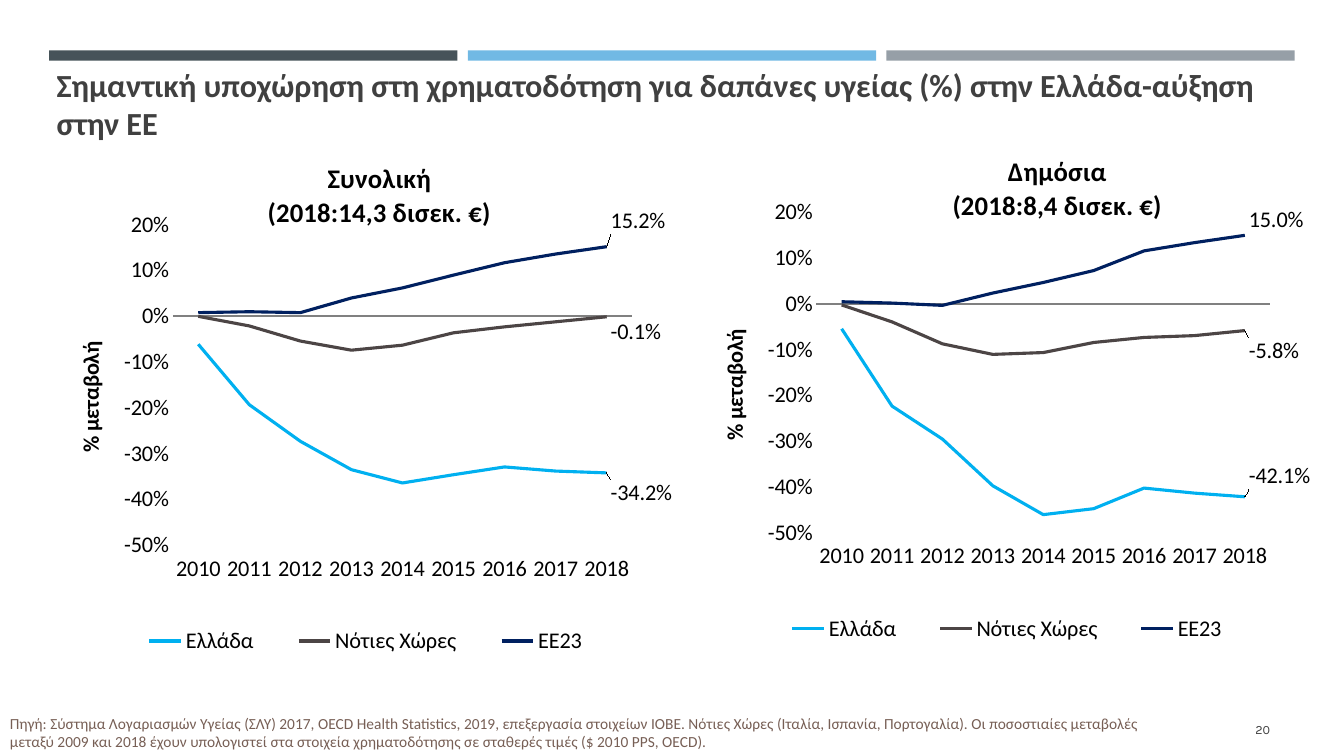
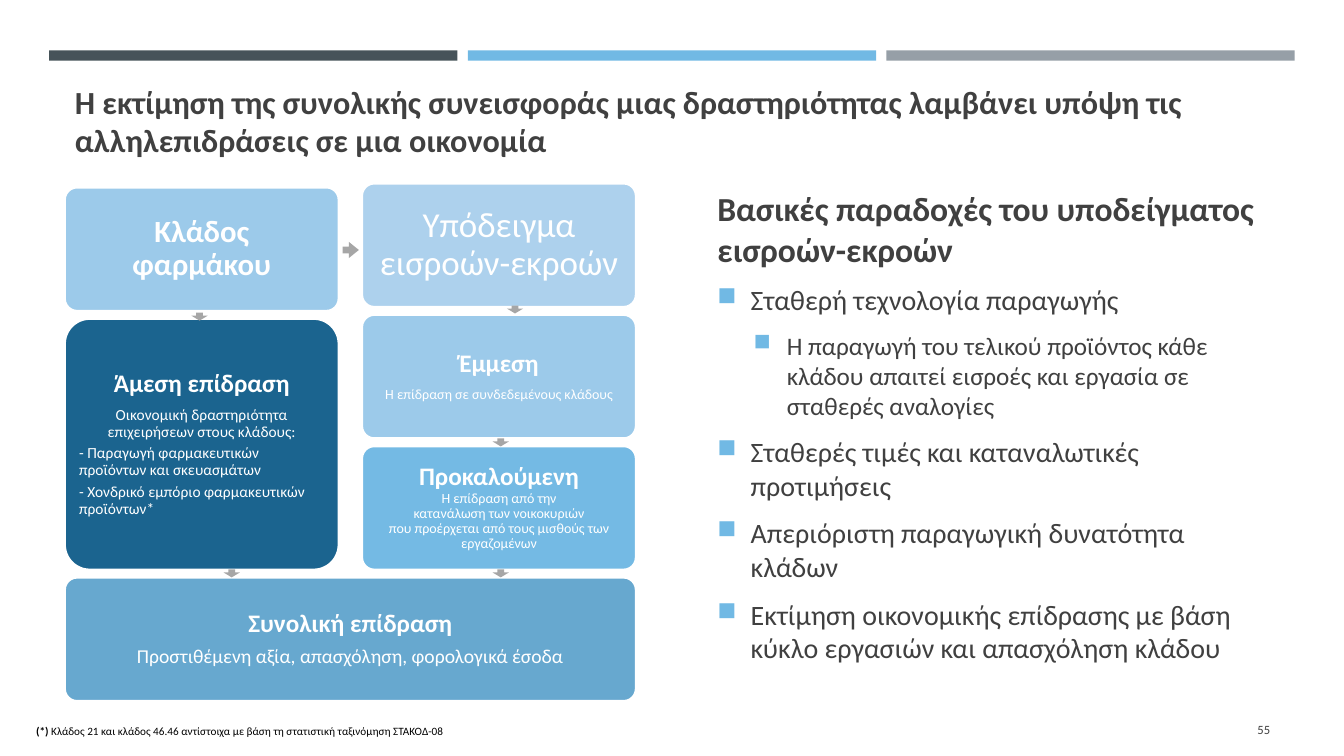
from lxml import etree
from pptx import Presentation
from pptx.chart.data import CategoryChartData
from pptx.dml.color import RGBColor
from pptx.enum.chart import XL_CHART_TYPE as ChartType, XL_LABEL_POSITION as LabelPosition
from pptx.enum.chart import XL_LEGEND_POSITION as LegendPosition, XL_TICK_LABEL_POSITION as TickLabels
from pptx.enum.chart import XL_TICK_MARK as TickMark
from pptx.enum.shapes import MSO_SHAPE as Shape
from pptx.enum.text import MSO_ANCHOR as Anchor, MSO_AUTO_SIZE as AutoSize, PP_ALIGN as Align
from pptx.oxml import parse_xml
from pptx.oxml.ns import nsdecls, qn
from pptx.util import Cm, Pt

FONT = "Calibri"
WHITE, BLACK, GREY, BROWN = "FFFFFF", "000000", "404040", "775F55"
ACCENT, ARROW = "71B9E4", "A6A6A6"
BANDS = ["465359", ACCENT, "969FA7"]

CHART_SLIDE = {
    "title": "Σημαντική υποχώρηση στη χρηματοδότηση για δαπάνες υγείας (%) στην Ελλάδα-αύξηση στην ΕΕ",
    "title_box": (1.17, 1.6, 31.55, 2.11),
    "number": "20",
    "source": "Πηγή: Σύστημα Λογαριασμών Υγείας (ΣΛΥ) 2017, OECD Health Statistics, 2019, επεξεργασία "
              "στοιχείων ΙΟΒΕ. Νότιες Χώρες (Ιταλία, Ισπανία, Πορτογαλία). Οι ποσοστιαίες μεταβολές "
              "μεταξύ 2009 και 2018 έχουν υπολογιστεί στα στοιχεία χρηματοδότησης σε σταθερές τιμές "
              "($ 2010 PPS, OECD).",
}
YEARS = [str(year) for year in range(2010, 2019)]
SERIES = [("Eλλάδα", "00B0F0"), ("Νότιες Χώρες", "4C4545"), ("EΕ23", "002060")]
CHARTS = [
    {
        "title": ["Συνολική", "(2018:14,3 δισεκ. €)"],
        "box": (1.42, 3.71, 15.52, 13.03),
        "title_at": (0.34, 0.02),
        "label_shifts": [0.04, 0.03, -0.05],
        "values": [
            [-0.061, -0.193, -0.273, -0.335, -0.364, -0.346, -0.329, -0.338, -0.342],
            [0, -0.021, -0.054, -0.074, -0.063, -0.036, -0.023, -0.012, -0.001],
            [0.008, 0.01, 0.008, 0.04, 0.062, 0.09, 0.117, 0.136, 0.152],
        ],
    },
    {
        "title": ["Δημόσια", "(2018:8,4 δισεκ. €)"],
        "box": (17.68, 3.4, 15.34, 13.03),
        "title_at": (0.41, 0.03),
        "label_shifts": [-0.04, 0.04, -0.03],
        "values": [
            [-0.054, -0.223, -0.295, -0.397, -0.46, -0.447, -0.402, -0.413, -0.421],
            [-0.002, -0.039, -0.087, -0.11, -0.106, -0.084, -0.073, -0.069, -0.058],
            [0.005, 0.002, -0.003, 0.024, 0.047, 0.073, 0.116, 0.134, 0.15],
        ],
    },
]

MODEL_SLIDE = {
    "title": "Η εκτίμηση της συνολικής συνεισφοράς μιας δραστηριότητας λαμβάνει υπόψη τις "
             "αλληλεπιδράσεις σε μια οικονομία",
    "title_box": (1.63, 2.03, 30.63, 2.11),
    "number": "55",
    "footnote": ("(*) ", "Κλάδος 21 και κλάδος 46.46 αντίστοιχα με βάση τη στατιστική ταξινόμηση ΣΤΑΚΟΔ-08"),
}
LEFT, RIGHT = 1.63, 9.12
CARD_WIDTH, CARD_HEIGHT = 6.91, 3.12
ROWS = [4.62 + 3.31 * row for row in range(4)]
LEFT_DROP = 0.1
CENTRE, START = Align.CENTER, Align.LEFT
CARDS = [
    ((LEFT, ROWS[3], RIGHT + CARD_WIDTH - LEFT, CARD_HEIGHT), "67A8CF", 0.18, [
        ("Συνολική επίδραση", 18, True, CENTRE, 0.35),
        ("Προστιθέμενη αξία, απασχόληση, φορολογικά έσοδα", 14, False, CENTRE, 0.35)]),
    ((LEFT, ROWS[1] + LEFT_DROP, CARD_WIDTH, 6.33), "1B648F", 0.18, [
        ("Άμεση επίδραση", 18, True, CENTRE, 0.35),
        ("Οικονομική δραστηριότητα επιχειρήσεων στους κλάδους:", 11, False, CENTRE, 0.35),
        ("- Παραγωγή φαρμακευτικών προϊόντων και σκευασμάτων", 11, False, START, 0.35),
        ("- Χονδρικό εμπόριο φαρμακευτικών προϊόντων*", 11, False, START, 0.35)]),
    ((LEFT, ROWS[0] + LEFT_DROP, CARD_WIDTH, CARD_HEIGHT), "9CCAEA", 0.23, [
        ("Κλάδος", 22, True, CENTRE, 0),
        ("φαρμάκου", 22, True, CENTRE, 0)]),
    ((RIGHT, ROWS[2], CARD_WIDTH, CARD_HEIGHT), "74BAE4", 0.18, [
        ("Προκαλούμενη", 18, True, CENTRE, 0),
        ("Η επίδραση από την", 10, False, CENTRE, 0),
        ("κατανάλωση των νοικοκυριών", 10, False, CENTRE, 0),
        ("που προέρχεται από τους μισθούς των εργαζομένων", 10, False, CENTRE, 0)]),
    ((RIGHT, ROWS[1], CARD_WIDTH, CARD_HEIGHT), "9CCAEA", 0.18, [
        ("Έμμεση", 18, True, CENTRE, 0.35),
        ("Η επίδραση σε συνδεδεμένους κλάδους", 10, False, CENTRE, 0.35)]),
    ((RIGHT, ROWS[0], CARD_WIDTH, CARD_HEIGHT), "ADD1ED", 0.25, [
        ("Υπόδειγμα εισροών-εκροών", 25, False, CENTRE, 0)]),
]
DOWN_ARROWS = [(5.03, 7.98), (12.98, 7.8), (12.62, 11.15), (12.62, 14.45), (5.84, 14.45)]
RIGHT_ARROW = (8.84, 6.3)
ASSUMPTIONS_TITLE = "Βασικές παραδοχές του υποδείγματος εισροών-εκροών"
ASSUMPTIONS = [
    (0, "Σταθερή τεχνολογία παραγωγής"),
    (1, "Η παραγωγή του τελικού προϊόντος κάθε κλάδου απαιτεί εισροές και εργασία σε σταθερές αναλογίες"),
    (0, "Σταθερές τιμές και καταναλωτικές προτιμήσεις"),
    (0, "Απεριόριστη παραγωγική δυνατότητα κλάδων"),
    (0, "Εκτίμηση οικονομικής επίδρασης με βάση κύκλο εργασιών και απασχόληση κλάδου"),
]
LEVELS = [(0.84, 20), (1.75, 18)]


def colour(value):
    return RGBColor.from_string(value)


def cm_box(values):
    return [Cm(value) for value in values]


def style(font, size, color=BLACK, bold=False, name=FONT):
    font.size, font.bold, font.name = Pt(size), bold, name
    font.color.rgb = colour(color)


def write(frame, text, size, color=BLACK, bold=False, name=FONT, align=Align.LEFT,
          spacing=1.0, before=0, after=0, indent=None):
    para = frame.paragraphs[0]
    if para.runs:
        para = frame.add_paragraph()
    para.alignment, para.line_spacing = align, spacing
    para.space_before, para.space_after = Pt(before), Pt(after)
    if indent:
        add_bullet(para, indent)
    span = para.add_run()
    span.text = text
    style(span.font, size, color, bold, name)
    return para


def add_bullet(para, indent):
    properties = para._p.get_or_add_pPr()
    properties.set("marL", str(Cm(indent)))
    properties.set("indent", str(-Cm(LEVELS[0][0])))
    tint = etree.SubElement(properties, qn("a:buClr"))
    etree.SubElement(tint, qn("a:srgbClr"), val=ACCENT)
    etree.SubElement(properties, qn("a:buSzPct"), val="92000")
    etree.SubElement(properties, qn("a:buChar"), char="■")


def add_text_box(page, box, anchor=Anchor.TOP):
    frame = page.shapes.add_textbox(*cm_box(box)).text_frame
    frame.word_wrap, frame.vertical_anchor = True, anchor
    return frame


def add_block(page, kind, box, fill, line=None):
    block = page.shapes.add_shape(kind, *cm_box(box))
    block.shadow.inherit = False
    block.fill.solid()
    block.fill.fore_color.rgb = colour(fill)
    if line:
        block.line.color.rgb, block.line.width = colour(line), Pt(1.75)
    else:
        block.line.fill.background()
    return block


def add_arrow(page, kind, centre, width, height):
    box = (centre[0] - width / 2, centre[1] - height / 2, width, height)
    arrow = add_block(page, kind, box, ARROW)
    arrow.adjustments[0], arrow.adjustments[1] = 0.41, 0.62


def add_bands(page, layout):
    for index, fill in enumerate(BANDS):
        band = add_block(page, Shape.RECTANGLE, (1.24 + 10.55 * index, 1.27, 10.29, 0.26), fill)
        band.element.nvSpPr.cNvPr.set("id", str(100 + index))
        layout.shapes.element.append(band.element)


def add_page(deck, layout, content, number_font):
    page = deck.slides.add_slide(layout)
    title = page.shapes.title
    title.left, title.top, title.width, title.height = cm_box(content["title_box"])
    frame = title.text_frame
    frame.auto_size, frame.word_wrap, frame.vertical_anchor = AutoSize.NONE, True, Anchor.BOTTOM
    write(frame, content["title"], 23, GREY, True)
    number = add_text_box(page, (29.34, 17.86, 2.92, 1.02), Anchor.MIDDLE)
    write(number, content["number"], 9, GREY, name=number_font, align=Align.RIGHT)
    return page


def set_layout(parent, before, **values):
    for old in parent.findall(qn("c:layout")):
        parent.remove(old)
    parts = "".join(f'<c:{key} val="{value}"/>' for key, value in values.items())
    layout = parse_xml(f'<c:layout {nsdecls("c")}><c:manualLayout>{parts}</c:manualLayout></c:layout>')
    if before is None:
        parent.insert(0, layout)
    else:
        before.addnext(layout)


def add_line_chart(page, content):
    data = CategoryChartData(number_format="0.0%")
    data.categories = YEARS
    for (name, _), values in zip(SERIES, content["values"]):
        data.add_series(name, values)
    chart = page.shapes.add_chart(ChartType.LINE, *cm_box(content["box"]), data).chart
    style(chart.font, 16)

    title = chart.chart_title
    for line in content["title"]:
        write(title.text_frame, line, 19.2, bold=True, align=Align.CENTER)
    title.include_in_layout = False
    x, y = content["title_at"]
    set_layout(title._element, title._element.find(qn("c:tx")), xMode="edge", yMode="edge", x=x, y=y)

    years = chart.category_axis
    years.major_tick_mark = TickMark.NONE
    years.tick_label_position = TickLabels.LOW
    years.format.line.color.rgb, years.format.line.width = colour("808080"), Pt(1.5)
    change = chart.value_axis
    change.minimum_scale, change.maximum_scale, change.major_unit = -0.5, 0.2, 0.1
    change.has_major_gridlines = False
    change.major_tick_mark = TickMark.NONE
    change.format.line.fill.background()
    change.tick_labels.number_format, change.tick_labels.number_format_is_linked = "0%", False
    write(change.axis_title.text_frame, "% μεταβολή", 16, bold=True)

    plot = chart.plots[0]
    plot.vary_by_categories = False
    for series, (_, tint) in zip(plot.series, SERIES):
        series.smooth = False
        series.format.line.color.rgb, series.format.line.width = colour(tint), Pt(2.25)
        series.data_labels.show_value = False
        label = series.points[len(YEARS) - 1].data_label
        style(label.font, 16)
        label.position = LabelPosition.RIGHT
    for label, shift in zip(chart.element.iter(qn("c:dLbl")), content["label_shifts"]):
        set_layout(label, label[0], x=0, y=shift)

    chart.has_legend = True
    chart.legend.position, chart.legend.include_in_layout = LegendPosition.BOTTOM, False
    legend = chart.legend._element
    set_layout(legend, legend.find(qn("c:legendPos")), xMode="edge", yMode="edge",
               x=0.09, y=0.92, w=0.83, h=0.07)
    area = next(chart.element.iter(qn("c:plotArea")))
    set_layout(area, None, layoutTarget="inner", xMode="edge", yMode="edge",
               x=0.19, y=0.15, w=0.75, h=0.62)


def add_card(page, box, fill, margin, lines):
    card = add_block(page, Shape.ROUNDED_RECTANGLE, box, fill, WHITE)
    card.adjustments[0] = 0.1
    frame = card.text_frame
    frame.word_wrap, frame.vertical_anchor = True, Anchor.MIDDLE
    frame.margin_left = frame.margin_right = frame.margin_top = frame.margin_bottom = Cm(margin)
    for text, size, bold, align, gap in lines:
        write(frame, text, size, WHITE, bold, align=align, spacing=0.9, after=round(size * gap, 1))


def add_assumptions(page):
    frame = add_text_box(page, (17.83, ROWS[0], 14.43, 13.03))
    write(frame, ASSUMPTIONS_TITLE, 24, GREY, True, after=6)
    for level, text in ASSUMPTIONS:
        indent, size = LEVELS[level]
        write(frame, text, size, GREY, before=size * 0.2, after=6, indent=indent)


def main():
    deck = Presentation()
    deck.slide_width, deck.slide_height = Cm(33.87), Cm(19.05)
    layout = deck.slide_layouts[5]

    page = add_page(deck, layout, CHART_SLIDE, "Karla")
    add_bands(page, layout)
    for content in CHARTS:
        add_line_chart(page, content)
    write(add_text_box(page, (0, 17.86, 29.64, 1.19)), CHART_SLIDE["source"], 11, BROWN)

    page = add_page(deck, layout, MODEL_SLIDE, FONT)
    for card in CARDS:
        add_card(page, *card)
    add_assumptions(page)
    for centre in DOWN_ARROWS:
        add_arrow(page, Shape.DOWN_ARROW, centre, 0.41, 0.2)
    add_arrow(page, Shape.RIGHT_ARROW, RIGHT_ARROW, 0.41, 0.41)
    mark, note = MODEL_SLIDE["footnote"]
    para = write(add_text_box(page, (0.66, 18.14, 13.59, 0.61)), mark, 8, bold=True)
    span = para.add_run()
    span.text = note
    style(span.font, 8)
    deck.save("out.pptx")


if __name__ == "__main__":
    main()
